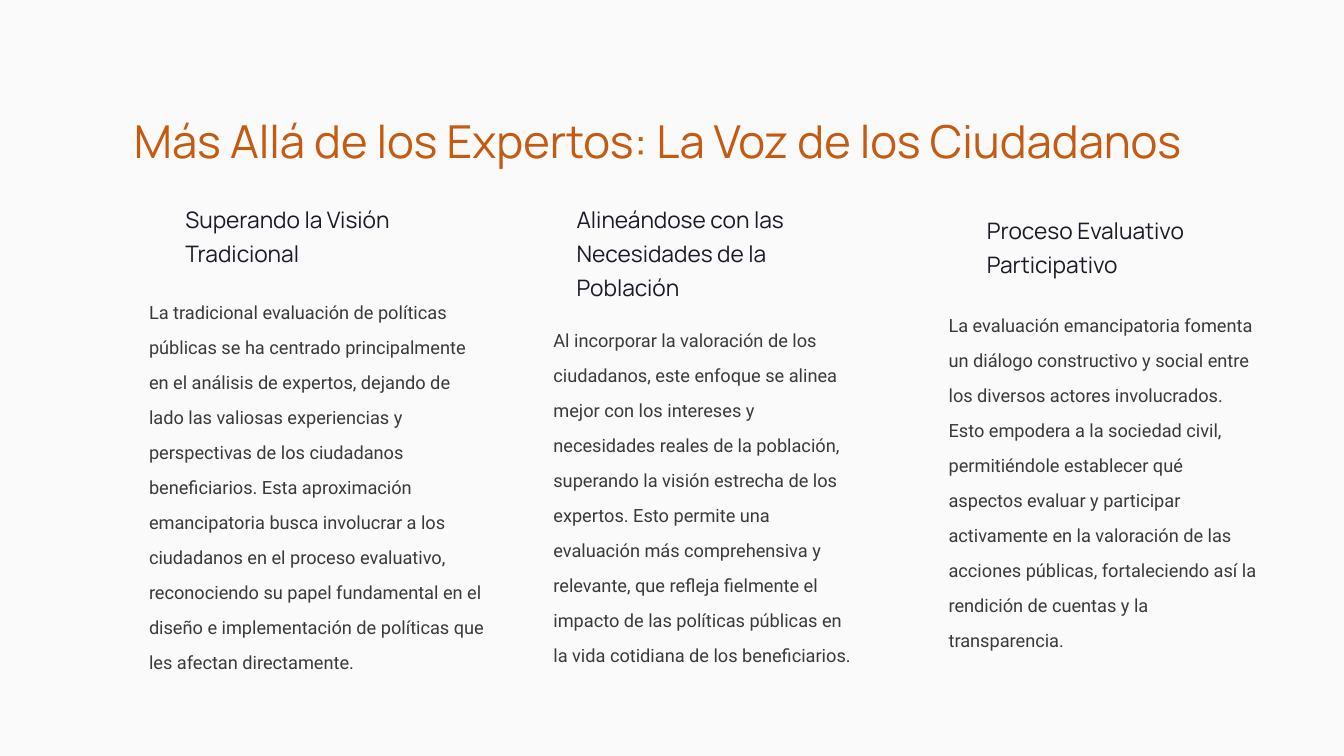
from lxml import etree
from pptx import Presentation
from pptx.dml.color import RGBColor
from pptx.enum.shapes import MSO_SHAPE
from pptx.oxml.ns import qn
from pptx.util import Inches, Pt

RECT = MSO_SHAPE.RECTANGLE
WIDTH, HEIGHT = 13.33, 7.5
COLORS = {
    "base": "ECECF3",
    "veil": "FFFFFF",
    "title": "C55A11",
    "heading": "1B1B27",
    "body": "3C3939",
}

# Text styles
TITLE = dict(font="Manrope", size=32.4, color="title", spacing=1.25)
HEADING = dict(font="Manrope", size=16.2, color="heading", spacing=1.25)
BODY = dict(font="Roboto", size=13, color="body", spacing=1.6)

# Each column: heading, heading box, body, body box
COLUMNS = [
    ("Superando la Visión Tradicional", (1.74, 1.93, 2.56, 0.56),
     "La tradicional evaluación de políticas públicas se ha centrado "
     "principalmente en el análisis de expertos, dejando de lado las valiosas "
     "experiencias y perspectivas de los ciudadanos beneficiarios. Esta "
     "aproximación emancipatoria busca involucrar a los ciudadanos en el "
     "proceso evaluativo, reconociendo su papel fundamental en el diseño e "
     "implementación de políticas que les afectan directamente.",
     (1.38, 2.81, 3.57, 4.03)),
    ("Alineándose con las Necesidades de la Población", (5.62, 1.93, 2.98, 0.84),
     "Al incorporar la valoración de los ciudadanos, este enfoque se alinea "
     "mejor con los intereses y necesidades reales de la población, superando "
     "la visión estrecha de los expertos. Esto permite una evaluación más "
     "comprehensiva y relevante, que refleja fielmente el impacto de las "
     "políticas públicas en la vida cotidiana de los beneficiarios.",
     (5.39, 3.09, 3.18, 3.46)),
    ("Proceso Evaluativo Participativo", (9.69, 2.03, 2.56, 0.56),
     "La evaluación emancipatoria fomenta un diálogo constructivo y social "
     "entre los diversos actores involucrados. Esto empodera a la sociedad "
     "civil, permitiéndole establecer qué aspectos evaluar y participar "
     "activamente en la valoración de las acciones públicas, fortaleciendo así "
     "la rendición de cuentas y la transparencia.",
     (9.31, 2.94, 3.28, 3.46)),
]


def add_backdrop(s, color, alpha=None):
    """Cover the slide with a plain rectangle; alpha is opacity in percent."""
    sp = s.shapes.add_shape(RECT, 0, 0, Inches(WIDTH), Inches(HEIGHT))
    sp.shadow.inherit = False
    sp.fill.solid()
    sp.fill.fore_color.rgb = RGBColor.from_string(COLORS[color])
    sp.line.fill.background()
    if alpha is not None:
        clr = sp.fill._xPr.find(qn("a:solidFill"))[0]
        etree.SubElement(clr, qn("a:alpha")).set("val", str(alpha * 1000))


def add_text(s, text, box, *, font, size, color, spacing):
    tf = s.shapes.add_textbox(*map(Inches, box)).text_frame
    tf.word_wrap = True
    p = tf.paragraphs[0]
    p.line_spacing = spacing
    r = p.add_run()
    r.text = text
    r.font.name = font
    r.font.size = Pt(size)
    r.font.color.rgb = RGBColor.from_string(COLORS[color])


def main():
    prs = Presentation()
    prs.slide_width, prs.slide_height = Inches(WIDTH), Inches(HEIGHT)
    s = prs.slides.add_slide(prs.slide_layouts[6])

    # Background
    add_backdrop(s, "base")
    add_backdrop(s, "veil", alpha=75)

    # Title
    add_text(s, "Más Allá de los Expertos: La Voz de los Ciudadanos",
             (1.23, 0.94, 11.12, 0.61), **TITLE)

    # Columns
    for heading, heading_box, body, body_box in COLUMNS:
        add_text(s, heading, heading_box, **HEADING)
        add_text(s, body, body_box, **BODY)

    prs.save("out.pptx")


if __name__ == "__main__":
    main()
